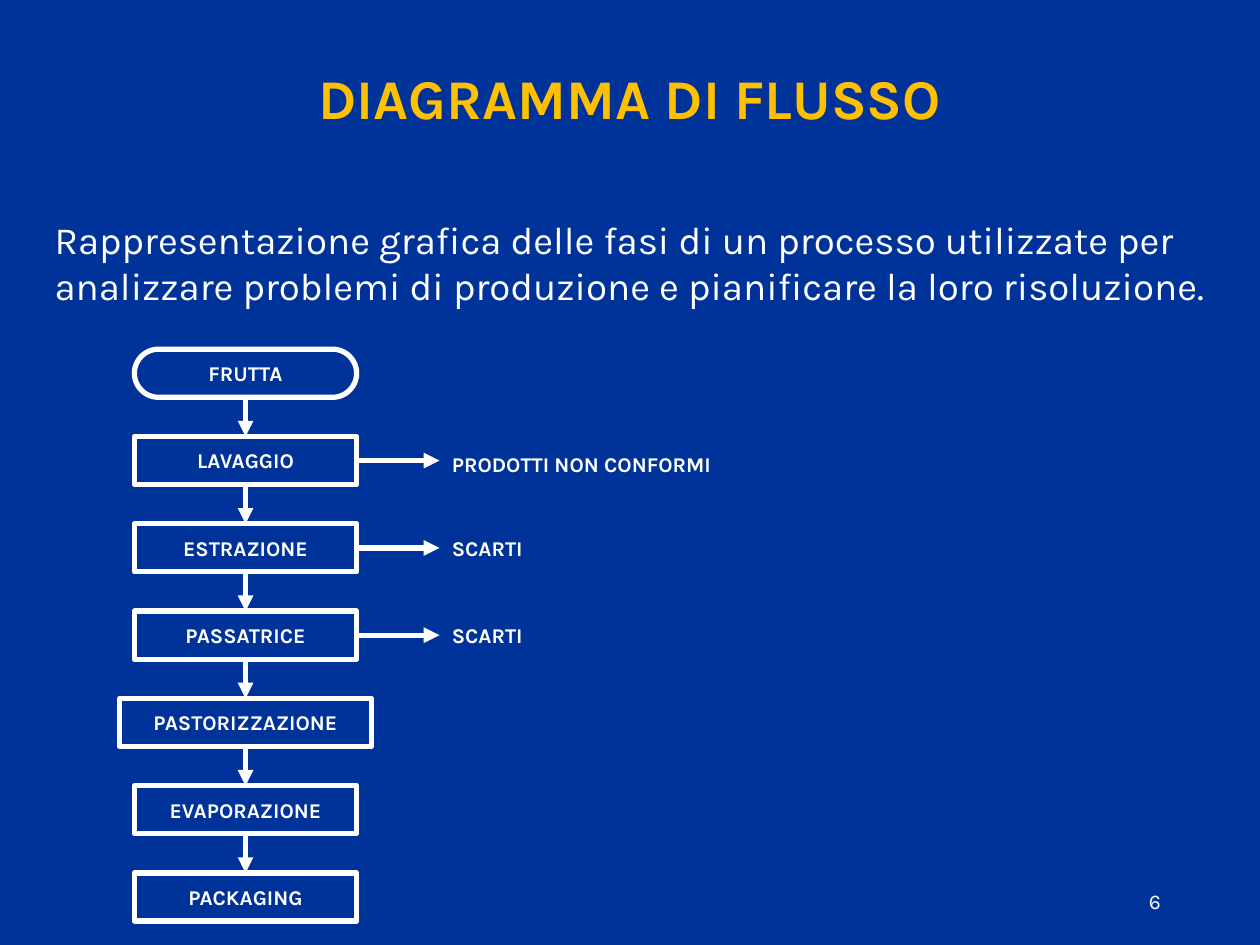
from lxml import etree
from pptx import Presentation
from pptx.dml.color import RGBColor
from pptx.enum.shapes import MSO_CONNECTOR, MSO_SHAPE
from pptx.enum.text import MSO_ANCHOR, PP_ALIGN
from pptx.oxml.ns import qn
from pptx.util import Cm, Pt

LEFT, CENTER, RIGHT = PP_ALIGN.LEFT, PP_ALIGN.CENTER, PP_ALIGN.RIGHT
TOP, MIDDLE, BOTTOM = MSO_ANCHOR.TOP, MSO_ANCHOR.MIDDLE, MSO_ANCHOR.BOTTOM
RECT, ROUNDED = MSO_SHAPE.RECTANGLE, MSO_SHAPE.ROUNDED_RECTANGLE
STRAIGHT = MSO_CONNECTOR.STRAIGHT

COLORS = {"background": "003399", "title": "FFC000", "ink": "FFFFFF"}
FONT = "Karla"

# Step name, box width, by-product, drop of its label below the arrow (cm)
STEPS = [
    ("FRUTTA", 4.48, None, 0),
    ("LAVAGGIO", 4.48, "PRODOTTI NON CONFORMI", 0.08),
    ("ESTRAZIONE", 4.48, "SCARTI", 0),
    ("PASSATRICE", 4.48, "SCARTI", 0),
    ("PASTORIZZAZIONE", 5.08, None, 0),
    ("EVAPORAZIONE", 4.48, None, 0),
    ("PACKAGING", 4.48, None, 0),
]
AXIS_X, FIRST_Y, PITCH, BOX_H = 4.95, 7.04, 1.76, 0.97
LABEL_X, LABEL_H = 8.86, 0.76


def color(name):
    return RGBColor.from_string(COLORS[name])


def write(tf, text, *, size=12, bold=False, ink="ink", align=LEFT,
          anchor=MIDDLE, wrap=True):
    tf.word_wrap = wrap
    tf.vertical_anchor = anchor
    p = tf.paragraphs[0]
    p.alignment = align
    r = p.add_run()
    r.text = text
    r.font.name, r.font.size, r.font.bold = FONT, Pt(size), bold
    r.font.color.rgb = color(ink)


class FlowSlide:
    """Holds the current slide and the outline style of its diagram."""

    def __init__(self, prs, line_width=3):
        self.s = prs.slides.add_slide(prs.slide_layouts[6])
        self.line_width = Pt(line_width)
        fill = self.s.background.fill
        fill.solid()
        fill.fore_color.rgb = color("background")

    def outline(self, line):
        line.color.rgb = color("ink")
        line.width = self.line_width

    def text(self, text, x, y, w, h, **fmt):
        sp = self.s.shapes.add_textbox(Cm(x), Cm(y), Cm(w), Cm(h))
        write(sp.text_frame, text, **fmt)

    def box(self, text, x, y, w, h, kind=RECT):
        sp = self.s.shapes.add_shape(kind, Cm(x), Cm(y), Cm(w), Cm(h))
        sp.shadow.inherit = False
        sp.fill.background()
        self.outline(sp.line)
        if kind == ROUNDED:
            sp.adjustments[0] = 0.5
        write(sp.text_frame, text, bold=True, align=CENTER, wrap=False)

    def arrow(self, x1, y1, x2, y2):
        sp = self.s.shapes.add_connector(STRAIGHT, Cm(x1), Cm(y1), Cm(x2), Cm(y2))
        self.outline(sp.line)
        etree.SubElement(sp.line._get_or_add_ln(), qn("a:tailEnd"), type="triangle")
        etree.SubElement(sp._element.spPr, qn("a:effectLst"))


def main():
    prs = Presentation()
    prs.slide_width, prs.slide_height = Cm(25.4), Cm(19.05)
    slide = FlowSlide(prs)

    slide.text("DIAGRAMMA DI FLUSSO", 0.85, 0.64, 23.7, 2.12, size=32,
               bold=True, ink="title", align=CENTER, anchor=BOTTOM)
    slide.text("Rappresentazione grafica delle fasi di un processo utilizzate "
               "per analizzare problemi di produzione e pianificare la loro "
               "risoluzione.", 0.85, 4.23, 23.75, 2.6, size=22, anchor=TOP)
    slide.text("6", 17.93, 17.65, 5.72, 1.02, align=RIGHT)

    for i, (name, width, waste, drop) in enumerate(STEPS):
        y = FIRST_Y + i * PITCH
        mid = y + BOX_H / 2
        slide.box(name, AXIS_X - width / 2, y, width, BOX_H,
                  ROUNDED if i == 0 else RECT)
        if i > 0:
            slide.arrow(AXIS_X, y - PITCH + BOX_H, AXIS_X, y)
        if waste:
            slide.arrow(AXIS_X + width / 2, mid, LABEL_X, mid)
            slide.text(waste, LABEL_X, mid - LABEL_H / 2 + drop, 6.48, LABEL_H,
                       bold=True)

    prs.save("out.pptx")


if __name__ == "__main__":
    main()
